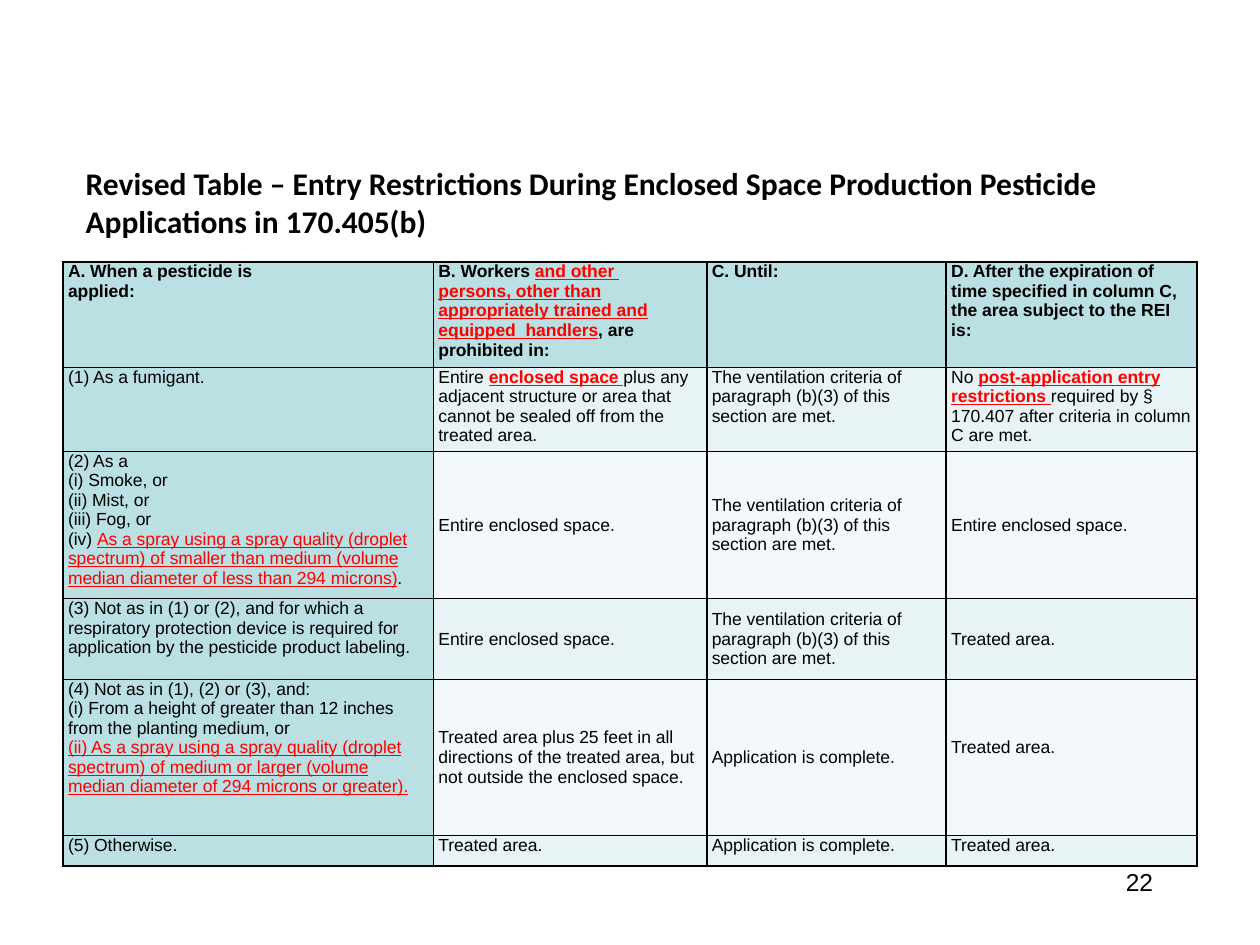
from lxml.etree import SubElement
from pptx import Presentation
from pptx.dml.color import RGBColor
from pptx.enum.text import MSO_ANCHOR, MSO_AUTO_SIZE, PP_ALIGN
from pptx.oxml.ns import qn
from pptx.util import Inches, Pt

COLORS = {"text": "000000", "change": "FF0000", "border": "000000",
          "head": "BBE0E3", "odd": "E7F3F4", "even": "F3F9FA"}
VENTILATION = "The ventilation criteria of paragraph (b)(3) of this section are met."
ENTIRE, TREATED, COMPLETE = "Entire enclosed space.", "Treated area.", "Application is complete."

# Asterisks enclose revised wording; a line break starts a new paragraph
ROWS = [
    ["A. When a pesticide is\napplied:",
     "B. Workers *and other *\n*persons, other than appropriately trained and "
     "equipped  handlers*, are prohibited in:",
     "C. Until:",
     "D. After the expiration of time specified in column C, the area subject to the REI is:"],
    ["(1) As a fumigant.",
     "Entire *enclosed space *plus any adjacent structure or area that cannot be "
     "sealed off from the treated area.",
     VENTILATION,
     "No *post-application entry restrictions *required by § 170.407 after criteria "
     "in column C are met."],
    ["(2) As a\n(i) Smoke, or\n(ii) Mist, or\n(iii) Fog, or\n"
     "(iv) *As a spray using a spray quality (droplet spectrum) of smaller than medium "
     "(volume median diameter of less than 294 microns)*.",
     ENTIRE, VENTILATION, ENTIRE],
    ["(3) Not as in (1) or (2), and for which a respiratory protection device is "
     "required for application by the pesticide product labeling.",
     ENTIRE, VENTILATION, TREATED],
    ["(4) Not as in (1), (2) or (3), and:\n"
     "(i) From a height of greater than 12 inches from the planting medium, or\n"
     "*(ii) As a spray using a spray quality (droplet spectrum) of medium or larger "
     "(volume median diameter of 294 microns or greater).*",
     "Treated area plus 25 feet in all directions of the treated area, but not "
     "outside the enclosed space.",
     COMPLETE, TREATED],
    ["(5) Otherwise.", TREATED, COMPLETE, TREATED],
]
COL_WIDTHS = [2.94, 2.17, 1.9, 1.99]
ROW_HEIGHTS = [0.74, 0.64, 1.16, 0.64, 1.24, 0.24]


def add_run(p, text, size=10, font="Arial", color="text", bold=False, underline=False):
    r = p.add_run()
    r.text = text
    f = r.font
    f.size, f.name, f.bold, f.underline = Pt(size), font, bold, underline
    f.color.rgb = RGBColor.from_string(COLORS[color])


class SlideBuilder:
    def __init__(self, prs):
        self.s = prs.slides.add_slide(prs.slide_layouts[5])

    def title(self, text, x, y, w, h):
        sp = self.s.shapes.title
        sp.left, sp.top, sp.width, sp.height = map(Inches, (x, y, w, h))
        tf = sp.text_frame
        tf.word_wrap = True
        tf.auto_size = MSO_AUTO_SIZE.SHAPE_TO_FIT_TEXT
        tf.vertical_anchor = MSO_ANCHOR.MIDDLE
        p = tf.paragraphs[0]
        p.alignment = PP_ALIGN.LEFT
        add_run(p, text, size=18, font="Calibri", bold=True)

    def page_number(self, text, x, y, w, h):
        tf = self.s.shapes.add_textbox(*map(Inches, (x, y, w, h))).text_frame
        tf.word_wrap = True
        p = tf.paragraphs[0]
        p.alignment = PP_ALIGN.RIGHT
        add_run(p, text, size=14)

    def table(self, rows, x, y, widths, heights):
        frame = self.s.shapes.add_table(len(rows), len(widths), Inches(x), Inches(y),
                                        Inches(sum(widths)), Inches(sum(heights)))
        tbl = frame.table
        tbl.first_row = tbl.horz_banding = False
        for col, w in zip(tbl.columns, widths):
            col.width = Inches(w)
        for row, h in zip(tbl.rows, heights):
            row.height = Inches(h)
        for i, texts in enumerate(rows):
            for j, text in enumerate(texts):
                self.cell(tbl.cell(i, j), text, i, j)
        return tbl

    def cell(self, cell, text, i, j):
        cell.margin_left = cell.margin_right = Inches(0.04)
        cell.margin_top = cell.margin_bottom = 0
        middle = 2 <= i <= 4 and j > 0
        cell.vertical_anchor = MSO_ANCHOR.MIDDLE if middle else MSO_ANCHOR.TOP
        self.borders(cell)
        cell.fill.solid()
        fill = "head" if i == 0 or j == 0 else "odd" if i % 2 else "even"
        cell.fill.fore_color.rgb = RGBColor.from_string(COLORS[fill])
        tf = cell.text_frame
        for n, line in enumerate(text.split("\n")):
            p = tf.add_paragraph() if n else tf.paragraphs[0]
            for k, part in enumerate(line.split("*")):
                revised = k % 2 == 1
                if part:
                    add_run(p, part, color="change" if revised else "text",
                            bold=i == 0 or (i == 1 and revised), underline=revised)

    def borders(self, cell):
        tc_pr = cell._tc.get_or_add_tcPr()
        for side in ("lnL", "lnR", "lnT", "lnB"):
            ln = SubElement(tc_pr, qn(f"a:{side}"), w=str(Pt(1)))
            fill = SubElement(ln, qn("a:solidFill"))
            SubElement(fill, qn("a:srgbClr"), val=COLORS["border"])


def main():
    prs = Presentation()
    prs.slide_width, prs.slide_height = Inches(10), Inches(7.5)
    slide = SlideBuilder(prs)
    slide.page_number("22", 7.17, 6.83, 2.08, 0.5)
    # Entry restrictions
    tbl = slide.table(ROWS, 0.5, 2.08, COL_WIDTHS, ROW_HEIGHTS)
    # Lift the last cell of row (4) by half a line
    tbl.cell(4, 3).margin_bottom = Inches(0.16)
    slide.title("Revised Table – Entry Restrictions During Enclosed Space Production "
                "Pesticide Applications in 170.405(b)", 0.58, 1.25, 8.92, 0.71)
    prs.save("out.pptx")


if __name__ == "__main__":
    main()
